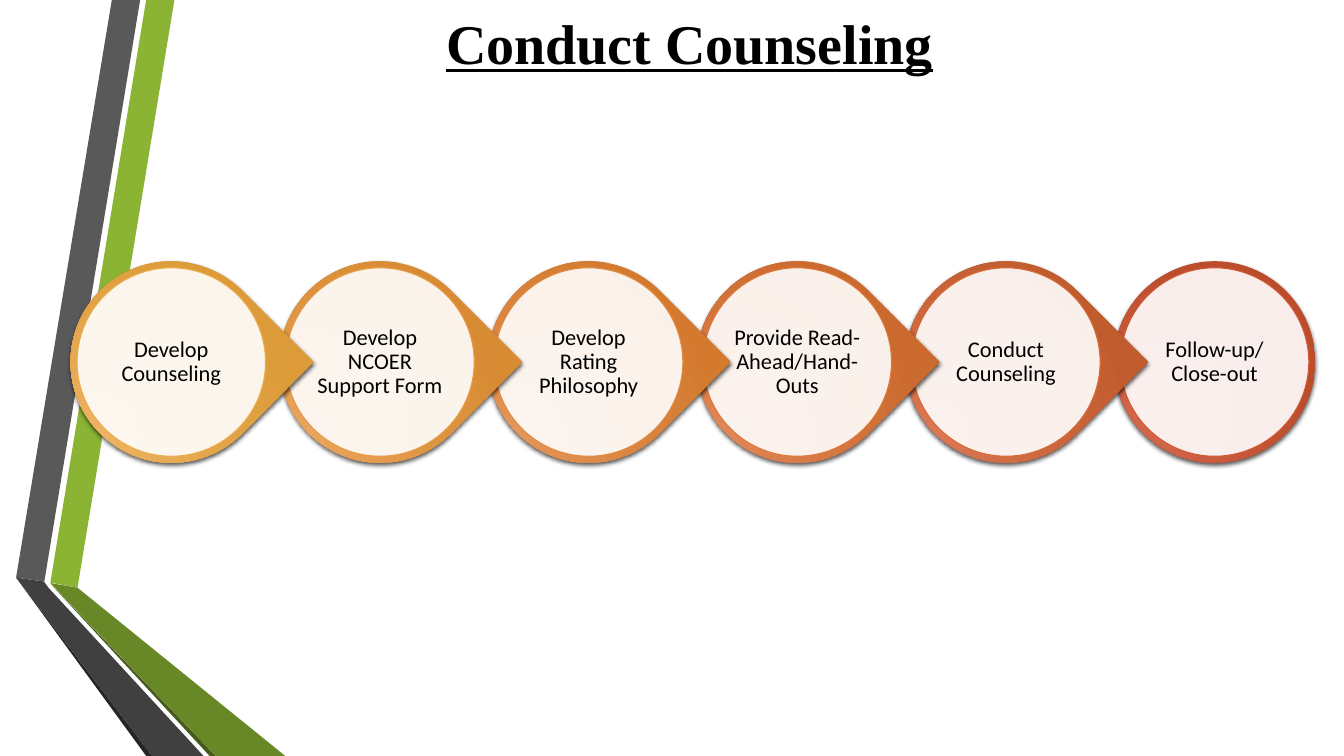
from dataclasses import dataclass

from lxml import etree
from pptx import Presentation
from pptx.dml.color import RGBColor
from pptx.enum import shapes, text
from pptx.oxml import parse_xml
from pptx.oxml.ns import nsdecls, qn
from pptx.util import Pt


@dataclass(frozen=True)
class Theme:
    ink: str = "000000"
    disc: str = "FFFFFF"
    disc_opacity: int = 90
    title_font: str = "Times New Roman"
    body_font: str = "Calibri"
    title_size: int = 40
    body_size: int = 16


@dataclass(frozen=True)
class Band:
    color: str
    points: tuple[tuple[float, float], ...]


@dataclass(frozen=True)
class Step:
    label: str
    light: str
    dark: str
    rim: str


THEME = Theme()

BANDS = (
    Band("8BB434", ((36, 416.2), (55.4, 419.8), (124.6, 0), (104.4, 0))),
    Band("595959", ((100.1, 0), (79.9, 0), (11.5, 412.6), (31.7, 415.4))),
    Band("262626", ((11.5, 412.6), (104.4, 540), (108.7, 540))),
    Band("465A1A", ((36, 416.9), (149.8, 540), (154.1, 540))),
    Band("688727", ((36, 416.5), (154.1, 540), (203.8, 540), (55.4, 419.8))),
    Band("404040", ((145.4, 540), (34.6, 419.8), (31.4, 415.4), (11.5, 412.6), (108.7, 540))),
)

STEPS = (
    Step("Develop Counseling", "EDB363", "DC9B38", "EBAC4B"),
    Step("Develop NCOER Support Form", "E9A45E", "D88B33", "E79B45"),
    Step("Develop Rating Philosophy", "E4955A", "D37A2F", "E28A40"),
    Step("Provide Read-Ahead/Hand-Outs", "E08657", "CB6A2E", "DE793A"),
    Step("Conduct Counseling", "DB7753", "C15C2F", "D86836"),
    Step("Follow-up/Close-out", "D66A51", "BC4D2C", "D35731"),
)

CHAIN_LEFT, CHAIN_TOP, CHAIN_PITCH = 50.4, 186.6, 149.04
DROP_SIZE, DISC_SIZE = 144, 134.6


def rgb(color: str) -> RGBColor:
    return RGBColor.from_string(color)


def draw_band(slide, band: Band) -> None:
    start, *rest = [(Pt(x), Pt(y)) for x, y in band.points]
    outline = slide.shapes.build_freeform(*start)
    outline.add_line_segments(rest, close=True)
    stripe = outline.convert_to_shape()
    stripe.shadow.inherit = False
    stripe.fill.solid()
    stripe.fill.fore_color.rgb = rgb(band.color)
    stripe.line.fill.background()


def add_round(slide, kind, left: float, top: float, size: float):
    shape = slide.shapes.add_shape(kind, Pt(left), Pt(top), Pt(size), Pt(size))
    shape.shadow.inherit = False
    return shape


def shade_drop(drop, step: Step) -> None:
    """Give the drop a radial gradient and a soft shadow below."""
    drop.fill.gradient()
    for stop, color in zip(drop.fill.gradient_stops, (step.light, step.dark)):
        stop.color.rgb = rgb(color)
    properties = drop._element.spPr
    gradient = properties.find(qn("a:gradFill"))
    gradient.replace(gradient.find(qn("a:lin")), parse_xml(
        f'<a:path {nsdecls("a")} path="circle">'
        '<a:fillToRect l="50000" t="100000" r="100000" b="50000"/></a:path>'))
    drop.line.fill.background()
    properties.find(qn("a:effectLst")).append(parse_xml(
        f'<a:outerShdw {nsdecls("a")} blurRad="{Pt(3)}" dist="{Pt(2)}" dir="5400000" '
        f'rotWithShape="0"><a:srgbClr val="{THEME.ink}"><a:alpha val="64000"/>'
        '</a:srgbClr></a:outerShdw>'))


def write_label(disc, label: str) -> None:
    frame = disc.text_frame
    frame.word_wrap = True
    frame.vertical_anchor = text.MSO_ANCHOR.MIDDLE
    frame.margin_left = frame.margin_right = Pt(1)
    frame.margin_top = frame.margin_bottom = Pt(1)
    paragraph = frame.paragraphs[0]
    paragraph.alignment = text.PP_ALIGN.CENTER
    paragraph.line_spacing = 0.9
    run = paragraph.add_run()
    run.text = label
    run.font.name = THEME.body_font
    run.font.size = Pt(THEME.body_size)
    run.font.color.rgb = rgb(THEME.ink)


def draw_step(slide, index: int, step: Step) -> None:
    left = CHAIN_LEFT + index * CHAIN_PITCH
    is_last = index == len(STEPS) - 1
    kind = shapes.MSO_SHAPE.OVAL if is_last else shapes.MSO_SHAPE.TEAR
    drop = add_round(slide, kind, left, CHAIN_TOP, DROP_SIZE)
    drop.rotation = 0 if is_last else 45
    shade_drop(drop, step)

    inset = (DROP_SIZE - DISC_SIZE) / 2
    disc = add_round(slide, shapes.MSO_SHAPE.OVAL, left + inset, CHAIN_TOP + inset, DISC_SIZE)
    disc.fill.solid()
    disc.fill.fore_color.rgb = rgb(THEME.disc)
    tint = disc._element.spPr.find(qn("a:solidFill"))[0]
    etree.SubElement(tint, qn("a:alpha")).set("val", str(THEME.disc_opacity * 1000))
    disc.line.color.rgb = rgb(step.rim)
    disc.line.width = Pt(0.75)
    write_label(disc, step.label)


def write_title(slide, wording: str) -> None:
    title = slide.shapes.title
    title.left, title.top, title.width, title.height = Pt(78.5), Pt(-22.3), Pt(828), Pt(104.4)
    frame = title.text_frame
    frame.auto_size = text.MSO_AUTO_SIZE.NONE
    frame.vertical_anchor = text.MSO_ANCHOR.MIDDLE
    paragraph = frame.paragraphs[0]
    paragraph.alignment = text.PP_ALIGN.CENTER
    run = paragraph.add_run()
    run.text = wording
    run.font.name = THEME.title_font
    run.font.size = Pt(THEME.title_size)
    run.font.bold = run.font.underline = True
    run.font.color.rgb = rgb(THEME.ink)


def main() -> None:
    deck = Presentation()
    deck.slide_width, deck.slide_height = Pt(960), Pt(540)
    slide = deck.slides.add_slide(deck.slide_layouts.get_by_name("Title Only"))
    for band in BANDS:
        draw_band(slide, band)
    write_title(slide, "Conduct Counseling")
    # Each drop's tip overlaps the next drop, so the chain is stacked from the right.
    for index, step in reversed(list(enumerate(STEPS))):
        draw_step(slide, index, step)
    deck.save("out.pptx")


if __name__ == "__main__":
    main()
